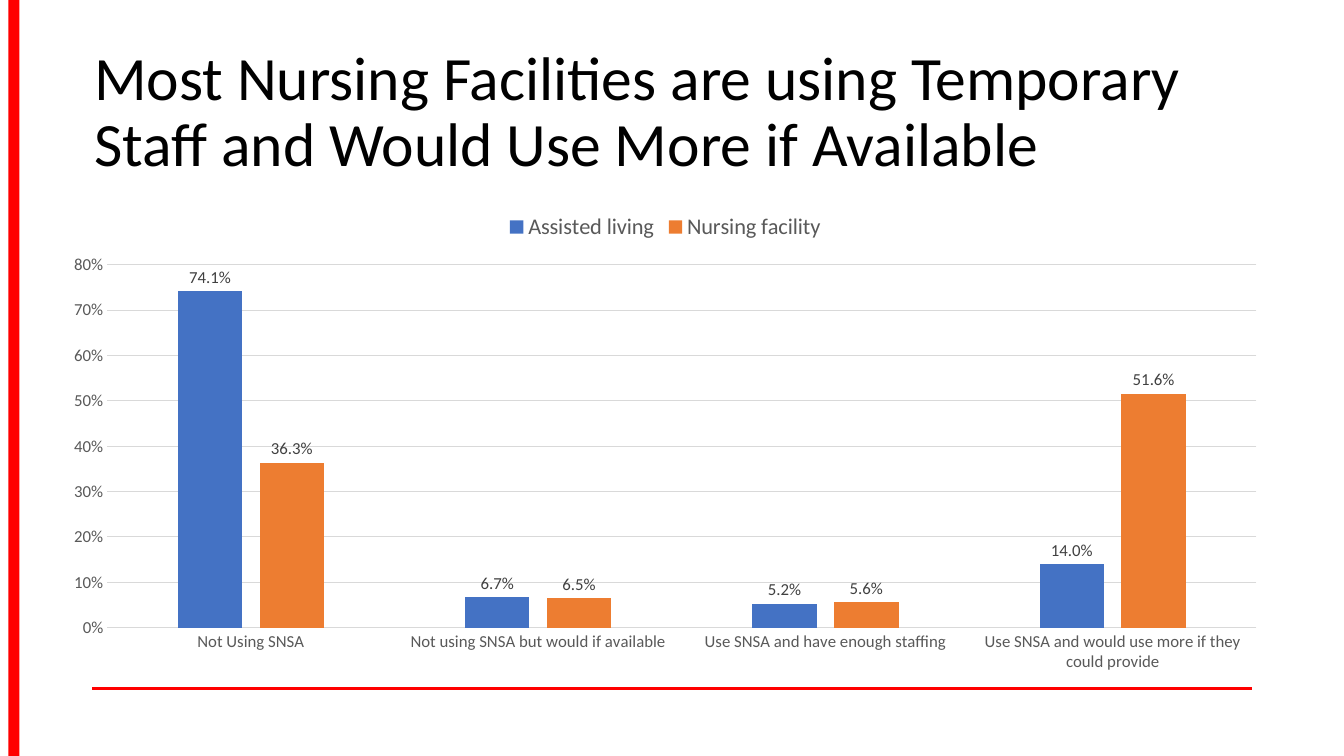
from lxml import etree
from pptx import Presentation
from pptx.chart.data import CategoryChartData
from pptx.dml.color import RGBColor
from pptx.enum.chart import XL_CHART_TYPE, XL_LABEL_POSITION, XL_LEGEND_POSITION, XL_TICK_MARK
from pptx.enum.shapes import MSO_CONNECTOR, MSO_SHAPE
from pptx.enum.text import MSO_ANCHOR, MSO_AUTO_SIZE
from pptx.oxml.ns import qn
from pptx.util import Inches, Pt

COLUMN_CLUSTERED = XL_CHART_TYPE.COLUMN_CLUSTERED
OUTSIDE_END = XL_LABEL_POSITION.OUTSIDE_END
LEGEND_TOP = XL_LEGEND_POSITION.TOP
NO_TICK = XL_TICK_MARK.NONE
STRAIGHT = MSO_CONNECTOR.STRAIGHT
RECTANGLE = MSO_SHAPE.RECTANGLE
MIDDLE = MSO_ANCHOR.MIDDLE
NO_AUTOFIT = MSO_AUTO_SIZE.NONE

FONT = "Calibri"
COLORS = {
    "accent": "FF0000",
    "title": "000000",
    "axis": "595959",
    "label": "404040",
    "grid": "D9D9D9",
    "assisted": "4472C4",
    "nursing": "ED7D31",
}
GRID_COLUMNS, GRID_ROWS = 160, 90

CATEGORIES = [
    "Not Using SNSA",
    "Not using SNSA but would if available",
    "Use SNSA and have enough staffing",
    "Use SNSA and would use more if they could provide",
]
SERIES = [
    ("Assisted living", "assisted", (0.741, 0.067, 0.052, 0.14)),
    ("Nursing facility", "nursing", (0.363, 0.065, 0.056, 0.516)),
]


class SlideBuilder:
    """Places styled elements on a slide by grid columns and rows."""

    def __init__(self, presentation):
        self.column = presentation.slide_width / GRID_COLUMNS
        self.row = presentation.slide_height / GRID_ROWS
        self.slide = presentation.slides.add_slide(presentation.slide_layouts[5])

    def box(self, left, top, width, height):
        """Turn grid units into slide lengths."""
        return (round(left * self.column), round(top * self.row),
                round(width * self.column), round(height * self.row))

    def color(self, name):
        return RGBColor.from_string(COLORS[name])

    def style_font(self, font, size, color):
        font.name = FONT
        font.size = Pt(size)
        font.bold = False
        font.color.rgb = self.color(color)

    def style_line(self, line, width, color):
        line.color.rgb = self.color(color)
        line.width = Pt(width)

    def title(self, text, *place):
        title = self.slide.shapes.title
        title.left, title.top, title.width, title.height = self.box(*place)
        frame = title.text_frame
        frame.text = text
        frame.word_wrap = True
        frame.auto_size = NO_AUTOFIT
        frame.vertical_anchor = MIDDLE
        paragraph = frame.paragraphs[0]
        paragraph.alignment = 1
        paragraph.line_spacing = 0.9
        self.style_font(paragraph.font, 44, "title")

    def bar(self, color, *place):
        shape = self.slide.shapes.add_shape(RECTANGLE, *self.box(*place))
        shape.shadow.inherit = False
        shape.fill.solid()
        shape.fill.fore_color.rgb = self.color(color)
        shape.line.fill.background()

    def rule(self, color, width, *ends):
        connector = self.slide.shapes.add_connector(STRAIGHT, *self.box(*ends))
        self.style_line(connector.line, width, color)
        etree.SubElement(connector._element.spPr, qn("a:effectLst"))

    def column_chart(self, categories, series_rows, *place):
        data = CategoryChartData(number_format="0.0%")
        data.categories = categories
        for name, _, values in series_rows:
            data.add_series(name, values)
        chart = self.slide.shapes.add_chart(COLUMN_CLUSTERED, *self.box(*place), data).chart
        self.style_font(chart.font, 10, "title")
        chart.has_title = False
        chart.has_legend = True
        chart.legend.position = LEGEND_TOP
        chart.legend.include_in_layout = False
        self.style_font(chart.legend.font, 16, "axis")
        self.style_axes(chart)

        plot = chart.plots[0]
        plot.vary_by_categories = False
        plot.gap_width = 219
        plot.overlap = -27
        for series, (_, color, _) in zip(plot.series, series_rows):
            series.format.fill.solid()
            series.format.fill.fore_color.rgb = self.color(color)
            labels = series.data_labels
            labels.show_value = True
            labels.number_format = "0.0%"
            labels.number_format_is_linked = False
            labels.position = OUTSIDE_END
            self.style_font(labels.font, 12, "label")

    def style_axes(self, chart):
        for axis in (chart.category_axis, chart.value_axis):
            axis.major_tick_mark = axis.minor_tick_mark = NO_TICK
            self.style_font(axis.tick_labels.font, 12, "axis")
        self.style_line(chart.category_axis.format.line, 0.75, "grid")
        values = chart.value_axis
        values.minimum_scale, values.maximum_scale = 0, 0.8
        values.major_unit = 0.1
        values.tick_labels.number_format = "0%"
        values.tick_labels.number_format_is_linked = False
        values.format.line.fill.background()
        self.style_line(values.major_gridlines.format.line, 0.75, "grid")


def main():
    presentation = Presentation()
    presentation.slide_width = Inches(13.33)
    presentation.slide_height = Inches(7.5)
    builder = SlideBuilder(presentation)
    builder.rule("accent", 2, 11, 82, 149, 82)
    builder.bar("accent", 1, 0, 1.3, GRID_ROWS)
    builder.title(
        "Most Nursing Facilities are using Temporary Staff and Would Use More if Available",
        10, 4.8, 145, 17.4)
    builder.column_chart(CATEGORIES, SERIES, 5.9, 24, 146.6, 57.1)
    presentation.save("out.pptx")


if __name__ == "__main__":
    main()
